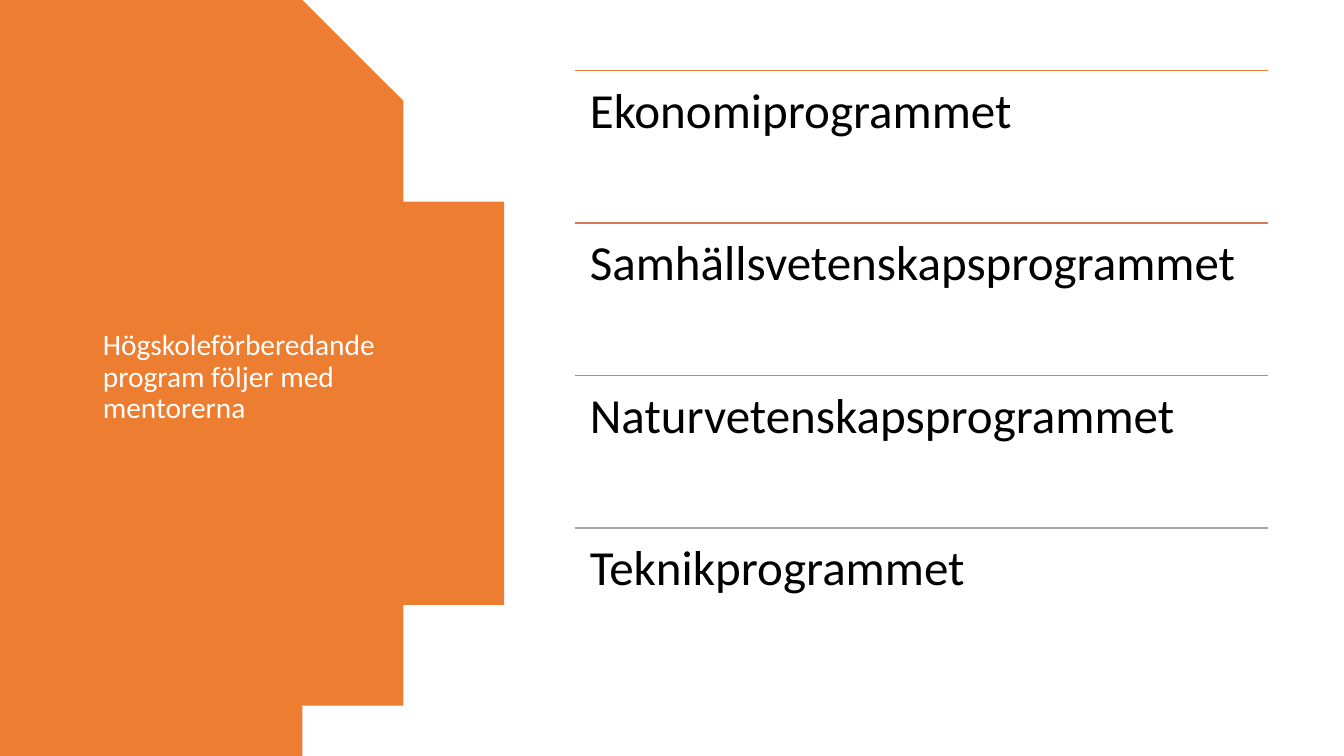
from dataclasses import dataclass

from lxml.etree import SubElement
from pptx import Presentation
from pptx.dml.color import RGBColor
from pptx.enum.text import MSO_ANCHOR, MSO_AUTO_SIZE, PP_ALIGN
from pptx.oxml.ns import qn
from pptx.util import Inches, Pt


@dataclass(frozen=True)
class Theme:
    font: str = "Calibri"
    accent: str = "ED7D31"
    on_accent: str = "FFFFFF"
    ink: str = "000000"
    heading_size: int = 21
    program_size: int = 35
    rule_width: int = 1
    line_spacing: float = 0.9


@dataclass(frozen=True)
class ProgramGrid:
    left: float = 5.7
    top: float = 0.7
    width: float = 6.88
    row_height: float = 1.513

    def row_top(self, row: int) -> float:
        return self.top + row * self.row_height


@dataclass(frozen=True)
class Program:
    name: str
    rule_color: str


THEME = Theme()
GRID = ProgramGrid()
SLIDE_WIDTH, SLIDE_HEIGHT = 13.33, 7.5
PROGRAMS = [
    Program("Ekonomiprogrammet", THEME.accent),
    Program("Samhällsvetenskapsprogrammet", "D17B5C"),
    Program("Naturvetenskapsprogrammet", "B98A82"),
    Program("Teknikprogrammet", "A5A5A5"),
]


def write(frame, text: str, *, size: int, color: str, anchor=MSO_ANCHOR.TOP,
          inset_x: float = 0.1, inset_y: float = 0.05) -> None:
    frame.word_wrap = True
    frame.auto_size = MSO_AUTO_SIZE.NONE
    frame.vertical_anchor = anchor
    frame.margin_left = frame.margin_right = Inches(inset_x)
    frame.margin_top = frame.margin_bottom = Inches(inset_y)
    paragraph = frame.paragraphs[0]
    paragraph.alignment = PP_ALIGN.LEFT
    paragraph.line_spacing = THEME.line_spacing
    run = paragraph.add_run()
    run.text = text
    run.font.name = THEME.font
    run.font.size = Pt(size)
    run.font.color.rgb = RGBColor.from_string(color)


def bezier(points: list[tuple[float, float]], steps: int = 60) -> list[tuple[float, float]]:
    """Points along a cubic curve, its start left out."""
    curve = []
    for step in range(1, steps + 1):
        t = step / steps
        weights = ((1 - t) ** 3, 3 * t * (1 - t) ** 2, 3 * t ** 2 * (1 - t), t ** 3)
        curve.append(tuple(sum(w * p[axis] for w, p in zip(weights, points))
                           for axis in (0, 1)))
    return curve


def draw_panel(slide) -> None:
    shoulder, edge, middle = 2.83, 4.93, SLIDE_HEIGHT / 2
    upper = [(shoulder, 0), (4.09, 0.77), (edge, 2.16), (edge, middle)]
    lower = [(x, SLIDE_HEIGHT - y) for x, y in reversed(upper)]
    outline = [upper[0], *bezier(upper), *bezier(lower), (0, SLIDE_HEIGHT)]
    builder = slide.shapes.build_freeform(0, 0, scale=Inches(1))
    builder.add_line_segments(outline, close=True)
    panel = builder.convert_to_shape()
    panel.shadow.inherit = False
    panel.fill.solid()
    panel.fill.fore_color.rgb = RGBColor.from_string(THEME.accent)
    panel.line.fill.background()


def place_heading(slide, text: str) -> None:
    heading = slide.shapes.title
    heading.left, heading.top = Inches(0.92), Inches(GRID.top)
    heading.width, heading.height = Inches(3.23), Inches(6.09)
    write(heading.text_frame, text, size=THEME.heading_size,
          color=THEME.on_accent, anchor=MSO_ANCHOR.MIDDLE)
    # Bring the heading in front of the panel
    slide.shapes._spTree.append(heading._element)


def draw_program(slide, program: Program, row: int) -> None:
    left, top = Inches(GRID.left), Inches(GRID.row_top(row))
    width = Inches(GRID.width)
    rule = slide.shapes.add_connector(1, left, top, left + width, top)
    rule.line.color.rgb = RGBColor.from_string(program.rule_color)
    rule.line.width = Pt(THEME.rule_width)
    SubElement(rule._element.spPr, qn("a:effectLst"))
    label = slide.shapes.add_textbox(left, top, width, Inches(GRID.row_height))
    write(label.text_frame, program.name, size=THEME.program_size,
          color=THEME.ink, inset_x=0.15, inset_y=0.15)


def main() -> None:
    deck = Presentation()
    deck.slide_width, deck.slide_height = Inches(SLIDE_WIDTH), Inches(SLIDE_HEIGHT)
    slide = deck.slides.add_slide(deck.slide_layouts.get_by_name("Title Only"))

    # Left panel with heading
    draw_panel(slide)
    place_heading(slide, "Högskoleförberedande program följer med mentorerna")

    # Ruled list of programs
    for row, program in enumerate(PROGRAMS):
        draw_program(slide, program, row)

    deck.save("out.pptx")


if __name__ == "__main__":
    main()
